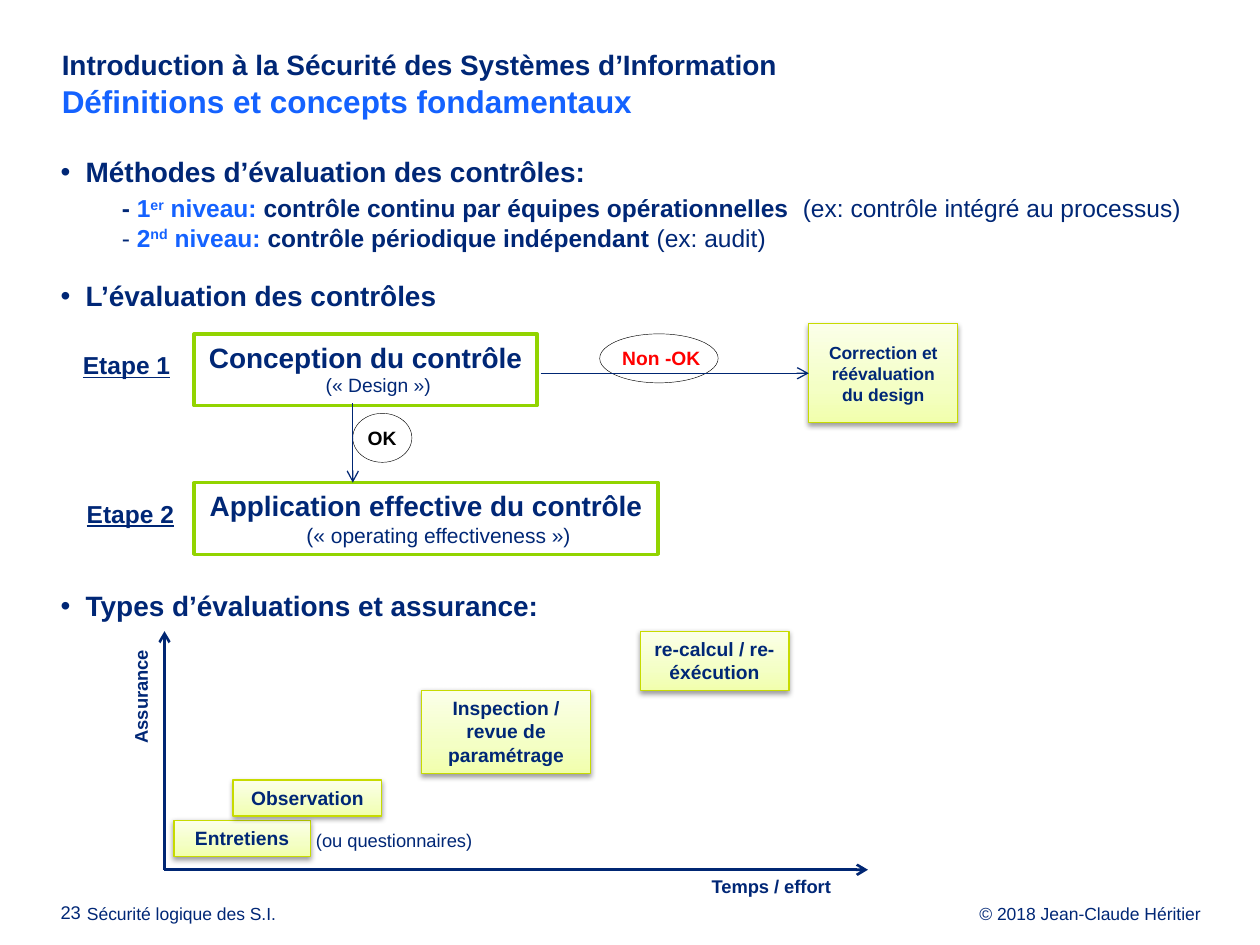
import copy
import dataclasses

import lxml.etree
import pptx
import pptx.dml.color
import pptx.enum.shapes
import pptx.enum.text
import pptx.oxml.ns
import pptx.util

Pt = pptx.util.Pt
RGBColor = pptx.dml.color.RGBColor
PRESET = pptx.enum.shapes.MSO_SHAPE
ALIGN = pptx.enum.text.PP_ALIGN
ANCHOR = pptx.enum.text.MSO_ANCHOR
qn = pptx.oxml.ns.qn

NAVY = RGBColor(0x00, 0x27, 0x76)
LINE_NAVY = RGBColor(0x00, 0x26, 0x73)
BLUE = RGBColor(0x14, 0x62, 0xFF)
GREEN = RGBColor(0x92, 0xD4, 0x00)
LIME = RGBColor(0xC7, 0xDB, 0x00)
RED = RGBColor(0xFF, 0x00, 0x00)
BLACK = RGBColor(0x00, 0x00, 0x00)
WHITE = RGBColor(0xFF, 0xFF, 0xFF)
NOTE_STOPS = [(0, RGBColor(0xF1, 0xFF, 0xAC)), (0.35, RGBColor(0xF4, 0xFF, 0xC5)),
              (1, RGBColor(0xFB, 0xFF, 0xE9))]


@dataclasses.dataclass
class Words:
    text: str
    size: float
    color: RGBColor = NAVY
    bold: bool = True
    underline: bool = False
    raised: bool = False
    breaks: bool = False  # a line break follows


def add_xml(parent, tag, **attributes):
    return lxml.etree.SubElement(parent, qn(tag), attributes)


class Deck:
    FONT = "Arial"

    def __init__(self, slide):
        self.slide = slide

    def add_words(self, paragraph, *phrases):
        for words in phrases:
            run = paragraph.add_run()
            run.text = words.text
            font = run.font
            font.name, font.size, font.bold = self.FONT, Pt(words.size), words.bold
            font.color.rgb = words.color
            if words.underline:
                font.underline = True
            if words.raised:
                run._r.get_or_add_rPr().set("baseline", "30000")
            if words.breaks:
                paragraph.add_line_break()
                add_xml(paragraph._p[-1], "a:rPr", sz=str(words.size * 100))

    def indent(self, paragraph, left, first=0):
        properties = paragraph._p.get_or_add_pPr()
        properties.set("marL", str(Pt(left)))
        properties.set("indent", str(Pt(first)))
        return properties

    def frame(self, shape, insets, anchor=ANCHOR.TOP, wrap=True):
        frame = shape.text_frame
        frame.auto_size = pptx.enum.text.MSO_AUTO_SIZE.NONE
        frame.word_wrap, frame.vertical_anchor = wrap, anchor
        (frame.margin_left, frame.margin_top,
         frame.margin_right, frame.margin_bottom) = map(Pt, insets)
        return frame

    def place(self, placeholder, left, top, width, height):
        placeholder.left, placeholder.top = Pt(left), Pt(top)
        placeholder.width, placeholder.height = Pt(width), Pt(height)
        return self.frame(placeholder, (2.9, 0, 0, 0))

    def title(self, box, *phrases):
        paragraph = self.place(self.slide.shapes.title, *box).paragraphs[0]
        paragraph.alignment, paragraph.line_spacing = ALIGN.LEFT, 1.0
        paragraph.space_before = Pt(0)
        self.add_words(paragraph, *phrases)

    def body(self, box, items):
        """Each item: bulleted or not, space before, phrases."""
        frame = self.place(self.slide.placeholders[1], *box)
        for number, (bulleted, before, phrases) in enumerate(items):
            paragraph = frame.add_paragraph() if number else frame.paragraphs[0]
            paragraph.level = 1 if bulleted else 0
            paragraph.line_spacing = 1.0
            paragraph.space_before = Pt(before)
            paragraph.space_after = Pt(2.7 if bulleted else 0)
            if bulleted:
                properties = self.indent(paragraph, 14.4, -14.4)
                add_xml(properties, "a:buFont", typeface=self.FONT)
                add_xml(properties, "a:buChar", char="•")
            else:
                add_xml(self.indent(paragraph, 35), "a:buNone")
            self.add_words(paragraph, *phrases)

    def label(self, box, words, turn=0):
        text = self.slide.shapes.add_textbox(*map(Pt, box))
        text.rotation = turn
        frame = self.frame(text, (7.2, 3.6, 7.2, 3.6), wrap=False)
        self.add_words(frame.paragraphs[0], words)

    def footer(self, left, width, words, align=ALIGN.LEFT):
        text = self.slide.shapes.add_textbox(Pt(left), Pt(517), Pt(width), Pt(11.5))
        paragraph = self.frame(text, (0, 0, 0, 0)).paragraphs[0]
        paragraph.alignment, paragraph.line_spacing = align, Pt(10.8)
        self.add_words(paragraph, words)

    def shape(self, preset, box, line, weight):
        shape = self.slide.shapes.add_shape(preset, *map(Pt, box))
        shape.shadow.inherit = False
        shape.fill.solid()
        shape.fill.fore_color.rgb = WHITE
        shape.line.color.rgb, shape.line.width = line, Pt(weight)
        return shape

    def step(self, box, *phrases):
        step = self.shape(PRESET.RECTANGLE, box, GREEN, 2)
        paragraph = self.frame(step, (7.2, 3.6, 7.2, 3.6), wrap=False).paragraphs[0]
        paragraph.alignment = ALIGN.CENTER
        self.indent(paragraph, 14.4, -14.4)
        self.add_words(paragraph, *phrases)

    def outcome(self, oval, box, words):
        self.shape(PRESET.OVAL, oval, BLACK, 0.25)
        self.label(box, words)

    def note(self, box, words, anchor=ANCHOR.TOP):
        note = self.shape(PRESET.RECTANGLE, box, LIME, 0.75)
        note.fill.gradient()
        note.fill.gradient_angle = 90
        first = note.fill.gradient_stops[0]._gs
        first.addnext(copy.deepcopy(first))
        for stop, (position, color) in zip(note.fill.gradient_stops, NOTE_STOPS):
            stop.position, stop.color.rgb = position, color
        effects = note._element.spPr.find(qn("a:effectLst"))
        shadow = add_xml(effects, "a:outerShdw", blurRad=str(Pt(3.1)), dist=str(Pt(1.6)),
                         dir="5400000", rotWithShape="0")
        add_xml(add_xml(shadow, "a:srgbClr", val=str(BLACK)), "a:alpha", val="38000")
        paragraph = self.frame(note, (7.2, 3.6, 7.2, 3.6), anchor).paragraphs[0]
        paragraph.alignment = ALIGN.CENTER
        self.add_words(paragraph, words)
        return note

    def arrow(self, start, end, weight, target=None):
        arrow = self.slide.shapes.add_connector(
            pptx.enum.shapes.MSO_CONNECTOR.STRAIGHT, *map(Pt, start + end))
        if target is not None:
            arrow.end_connect(target, 1)
        arrow.line.color.rgb, arrow.line.width = LINE_NAVY, Pt(weight)
        add_xml(arrow.line._get_or_add_ln(), "a:tailEnd", type="arrow")
        add_xml(arrow._element.spPr, "a:effectLst")


def main():
    show = pptx.Presentation()
    show.slide_width, show.slide_height = Pt(720), Pt(540)
    deck = Deck(show.slides.add_slide(show.slide_layouts[1]))

    # Footer
    deck.footer(504, 182, Words("© 2018 Jean-Claude Héritier", 10, bold=False), ALIGN.RIGHT)
    deck.footer(49.7, 182, Words("Sécurité logique des S.I.", 10, bold=False))
    deck.footer(34.6, 18.7, Words("23", 10.5, bold=False))

    # Title and list
    deck.title((32.4, 27.4, 663, 49.7),
               Words("Introduction à la Sécurité des Systèmes d’Information", 16, breaks=True),
               Words("Définitions et concepts fondamentaux", 18, BLUE))
    deck.body((31.7, 88.5, 662.4, 414), [
        (True, 0, [Words("Méthodes d’évaluation des contrôles:", 16)]),
        (False, 0, [Words("- ", 14), Words("1", 14, BLUE), Words("er", 14, BLUE, raised=True),
                    Words(" niveau: ", 14, BLUE),
                    Words("contrôle continu par équipes opérationnelles ", 14),
                    Words(" (ex: contrôle intégré au processus)", 14, bold=False)]),
        (False, 0, [Words("- ", 14, bold=False), Words("2", 14, BLUE),
                    Words("nd", 14, BLUE, raised=True), Words(" niveau: ", 14, BLUE),
                    Words("contrôle périodique indépendant ", 14),
                    Words("(ex: audit)", 14, bold=False)]),
        (True, 15.4, [Words("L’évaluation des contrôles", 16)]),
        (True, 155.2, [Words("Types d’évaluations et assurance:", 16)]),
    ])

    # Assurance against effort
    origin = (94, 497)
    deck.arrow(origin, (496, 497), 1.5)
    for box, method in [((99.4, 468.7, 78, 20.6), "Entretiens"),
                        ((133.2, 445.7, 85, 20.6), "Observation"),
                        ((241, 394.5, 96.5, 47.5), "Inspection / revue de paramétrage"),
                        ((365.8, 360.7, 85, 34), "re-calcul / re-éxécution")]:
        deck.note(box, Words(method, 11))
    deck.arrow(origin, (94, 360.7), 1.5)
    deck.label((399.6, 496.8, 84.2, 20), Words("Temps / effort", 10.5))
    deck.label((46, 387.4, 69, 20), Words("Assurance", 10.5), turn=270)
    deck.label((173.5, 470.2, 105.8, 20), Words("(ou questionnaires)", 10.5, bold=False))

    # Two-step evaluation
    deck.step((111, 190.8, 196, 41), Words("Conception du contrôle", 16, breaks=True),
              Words("(« Design »)", 11, bold=False))
    deck.step((111, 275.8, 265, 41), Words("Application effective du contrôle", 16, breaks=True),
              Words("(« operating effectiveness »)", 12, bold=False))
    deck.outcome((201.6, 236.2, 33.8, 28), (203, 239.8, 31, 21), Words("OK", 11, BLACK))
    deck.arrow((201.6, 230.4), (201.6, 275.8), 0.75)
    deck.outcome((342.7, 190.8, 67.7, 28), (348.5, 194.4, 59.8, 21), Words("Non -OK", 11, RED))
    correction = deck.note((462.2, 185, 85, 56.6),
                           Words("Correction et réévaluation du design", 10), ANCHOR.MIDDLE)
    deck.arrow((309, 213.3), (462.2, 213.3), 0.75, correction)
    deck.label((40.3, 196.6, 64.8, 24.5), Words("Etape 1", 14, underline=True))
    deck.label((42.5, 281.5, 64.8, 24.5), Words("Etape 2", 14, underline=True))

    show.save("out.pptx")


if __name__ == "__main__":
    main()
